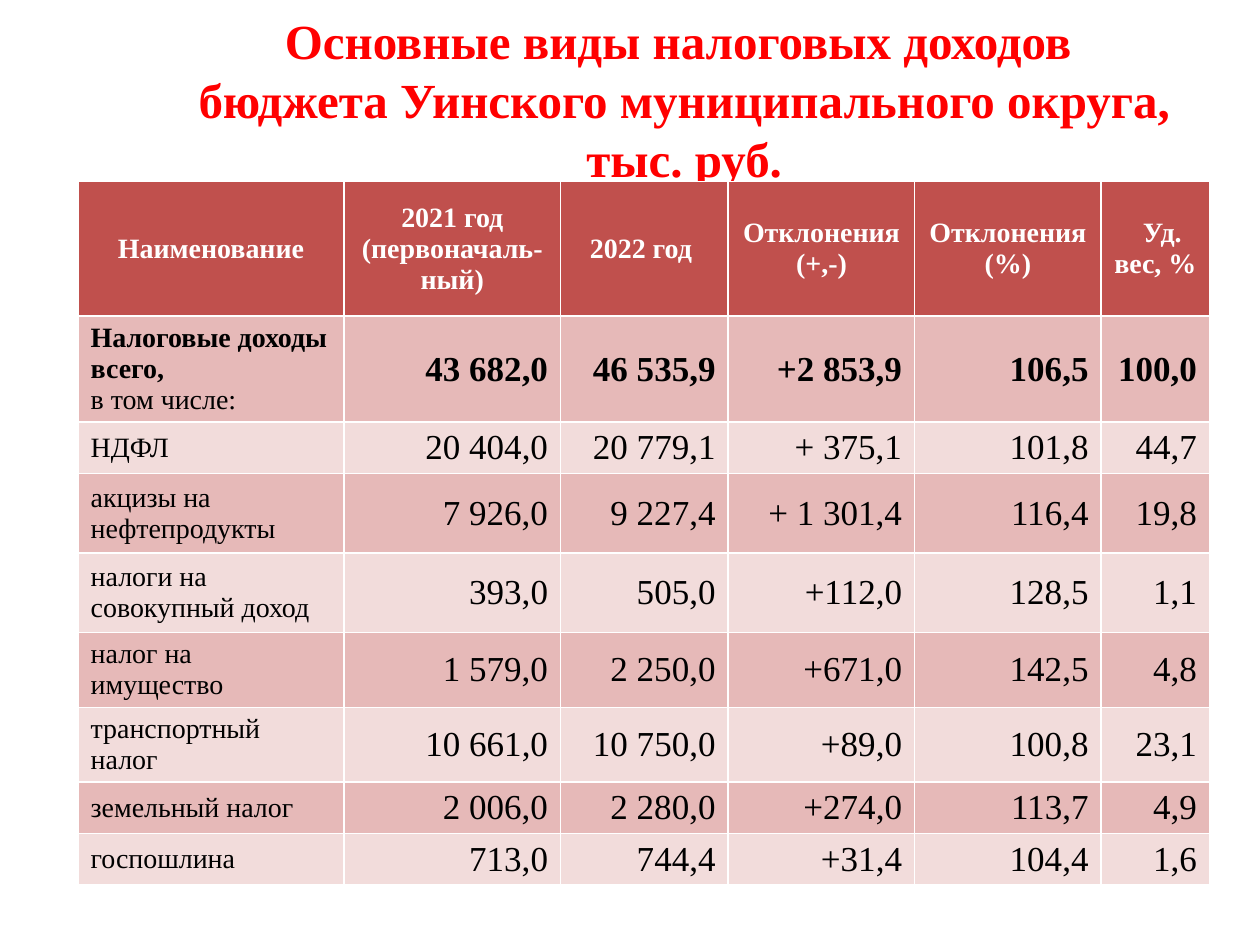
from lxml import etree
from pptx import Presentation, util as u
from pptx.dml.color import RGBColor
from pptx.enum import text
from pptx.oxml.ns import qn

FONT = "Times New Roman"
RED = RGBColor(0xFF, 0x00, 0x00)
WHITE = RGBColor(0xFF, 0xFF, 0xFF)
BLACK = RGBColor(0x00, 0x00, 0x00)
HEADER = RGBColor(0xC0, 0x50, 0x4D)
BANDS = [RGBColor(0xE6, 0xB9, 0xB8), RGBColor(0xF2, 0xDC, 0xDB)]

HEADINGS = ["Наименование", "2021 год (первоначаль-ный)", "2022 год ",
            "Отклонения (+,-)", "Отклонения (%)", "Уд. вес, %"]
TAXES = [
    ["Налоговые доходы всего,\nв том числе:", "43 682,0", "46 535,9", "+2 853,9", "106,5", "100,0"],
    ["НДФЛ", "20 404,0", "20 779,1", "+ 375,1", "101,8", "44,7"],
    ["акцизы на нефтепродукты", "7 926,0", "9 227,4", "+ 1 301,4", "116,4", "19,8"],
    ["налоги на совокупный доход", "393,0", "505,0", "+112,0", "128,5", "1,1"],
    ["налог на имущество", "1 579,0", "2 250,0", "+671,0", "142,5", "4,8"],
    ["транспортный налог", "10 661,0", "10 750,0", "+89,0", "100,8", "23,1"],
    ["земельный налог", "2 006,0", "2 280,0", "+274,0", "113,7", "4,9"],
    ["госпошлина", "713,0", "744,4", "+31,4", "104,4", "1,6"],
]
COLUMNS = [2.11, 1.72, 1.33, 1.48, 1.48, 0.86]
ROWS = [1.07, 0.8, 0.36, 0.63, 0.63, 0.47, 0.47, 0.36, 0.39]


def add_run(paragraph, words, size, color, bold):
    run = paragraph.add_run()
    run.text = words
    run.font.name = FONT
    run.font.size = u.Pt(size)
    run.font.bold = bold
    run.font.color.rgb = color


def add_borders(cell, color):
    """Draw a 1 pt line on all four sides; call before the fill is set."""
    properties = cell._tc.get_or_add_tcPr()
    for side in ("a:lnL", "a:lnR", "a:lnT", "a:lnB"):
        line = etree.SubElement(properties, qn(side), w=str(u.Pt(1)))
        fill = etree.SubElement(line, qn("a:solidFill"))
        etree.SubElement(fill, qn("a:srgbClr"), val=str(color))


prs = Presentation()
prs.slide_width, prs.slide_height = u.Inches(10), u.Inches(7.5)
slide = prs.slides.add_slide(prs.slide_layouts.get_by_name("Title Only"))

title = slide.shapes.title
title.left, title.top = u.Inches(1.17), u.Inches(0.16)
title.width, title.height = u.Inches(8.52), u.Inches(1.25)
frame = title.text_frame
frame.auto_size = text.MSO_AUTO_SIZE.NONE
frame.word_wrap = True
frame.vertical_anchor = text.MSO_ANCHOR.MIDDLE
heading = frame.paragraphs[0]
heading.alignment = text.PP_ALIGN.CENTER
add_run(heading, "Основные виды налоговых доходов ", 28, RED, True)
heading.add_line_break()
add_run(heading, "бюджета Уинского муниципального округа, тыс. руб.", 28, RED, True)

revenues = slide.shapes.add_table(
    len(ROWS), len(COLUMNS), u.Inches(0.62), u.Inches(1.44),
    u.Inches(sum(COLUMNS)), u.Inches(sum(ROWS))).table
for column, width in zip(revenues.columns, COLUMNS):
    column.width = u.Inches(width)
for row, height in zip(revenues.rows, ROWS):
    row.height = u.Inches(height)

for r, values in enumerate([HEADINGS] + TAXES):
    for c, value in enumerate(values):
        cell = revenues.cell(r, c)
        add_borders(cell, WHITE)
        cell.fill.solid()
        cell.fill.fore_color.rgb = BANDS[(r - 1) % 2] if r else HEADER
        cell.vertical_anchor = text.MSO_ANCHOR.MIDDLE

        if r == 0:
            align, size, color = text.PP_ALIGN.CENTER, 16, WHITE
        elif c == 0:
            align, size, color = text.PP_ALIGN.LEFT, 16, BLACK
        else:
            align, size, color = text.PP_ALIGN.RIGHT, 20, BLACK

        for n, words in enumerate(value.split("\n")):
            frame = cell.text_frame
            paragraph = frame.add_paragraph() if n else frame.paragraphs[0]
            paragraph.alignment = align
            add_run(paragraph, words, size, color, r < 2 and n == 0)

# The first line of the share heading sits slightly to the right.
share = revenues.cell(0, len(COLUMNS) - 1).text_frame.paragraphs[0]
share._p.get_or_add_pPr().set("indent", str(u.Inches(0.11)))

prs.save("out.pptx")
